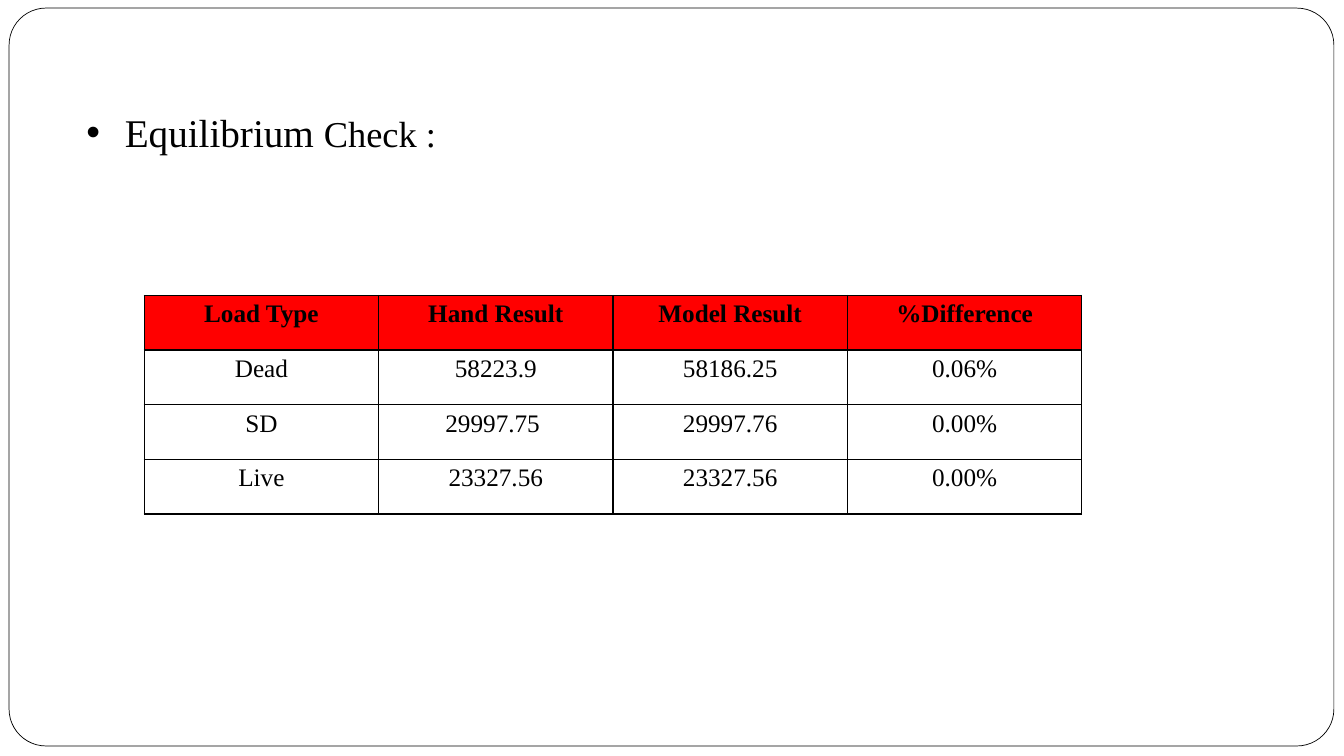
from lxml import etree
from pptx import Presentation, util as u
from pptx.dml.color import RGBColor
from pptx.enum import shapes, text
from pptx.oxml import ns

theme = {
    "font": "Times New Roman",
    "ink": RGBColor.from_string("000000"),
    "paper": RGBColor.from_string("FFFFFF"),
    "head": RGBColor.from_string("FF0000"),
    "title": 28, "check": 26, "cell": 18,
}

deck = Presentation()
deck.slide_width, deck.slide_height = u.Inches(13.33), u.Inches(7.5)
slide = deck.slides.add_slide(deck.slide_layouts[6])


def area(left, top, width, height):
    """Turn percent of the slide into a box."""
    col, row = deck.slide_width / 100, deck.slide_height / 100
    return [round(n) for n in (left * col, top * row, width * col, height * row)]


def write(para, words, size, bold=False):
    run = para.add_run()
    run.text = words
    look = {"name": theme["font"], "size": u.Pt(size), "bold": bold}
    for key, val in look.items():
        setattr(run.font, key, val)
    run.font.color.rgb = theme["ink"]


# Rounded page frame
frame = slide.shapes.add_shape(shapes.MSO_SHAPE.ROUNDED_RECTANGLE,
                               *area(0.68, 1.07, 98.57, 97.6))
frame.adjustments[0] = 0.05
frame.shadow.inherit = False
frame.fill.solid()
frame.fill.fore_color.rgb = theme["paper"]
frame.line.color.rgb = theme["ink"]
frame.line.width = u.Pt(0.5)

# Bulleted heading
box = slide.shapes.add_textbox(*area(5.7, 10.53, 42, 9.73)).text_frame
box.word_wrap = True
head = box.paragraphs[0]
for key, val in {"line_spacing": 1.5, "space_after": u.Pt(6)}.items():
    setattr(head, key, val)
write(head, "Equilibrium ", theme["title"])
write(head, "Check :", theme["check"])
props = head._p.get_or_add_pPr()
props.set("marL", str(u.Inches(0.38)))
props.set("indent", str(-u.Inches(0.38)))
etree.SubElement(props, ns.qn("a:buFont"), typeface="Arial")
etree.SubElement(props, ns.qn("a:buChar"), char="•")

# Load comparison table
loads = [
    ["Load Type", "Hand Result", "Model Result", "%Difference"],
    ["Dead", "58223.9", "58186.25", "0.06%"],
    ["SD", "29997.75 ", "29997.76", "0.00%"],
    ["Live", "23327.56", "23327.56", "0.00%"],
]
grid = slide.shapes.add_table(len(loads), len(loads[0]),
                              *area(10.73, 39.07, 69.77, 28.93)).table
for r, row in enumerate(loads):
    for c, words in enumerate(row):
        cell = grid.cell(r, c)
        cell.fill.solid()
        cell.fill.fore_color.rgb = theme["paper"] if r else theme["head"]
        para = cell.text_frame.paragraphs[0]
        para.alignment = text.PP_ALIGN.CENTER
        write(para, words, theme["cell"], r == 0)
        # Cell borders come before the fill
        for i, side in enumerate("LRTB"):
            edge = etree.Element(ns.qn("a:ln" + side), w=str(u.Pt(1)))
            ink = etree.SubElement(edge, ns.qn("a:solidFill"))
            etree.SubElement(ink, ns.qn("a:srgbClr"), val=str(theme["ink"]))
            cell._tc.get_or_add_tcPr().insert(i, edge)

deck.save("out.pptx")
